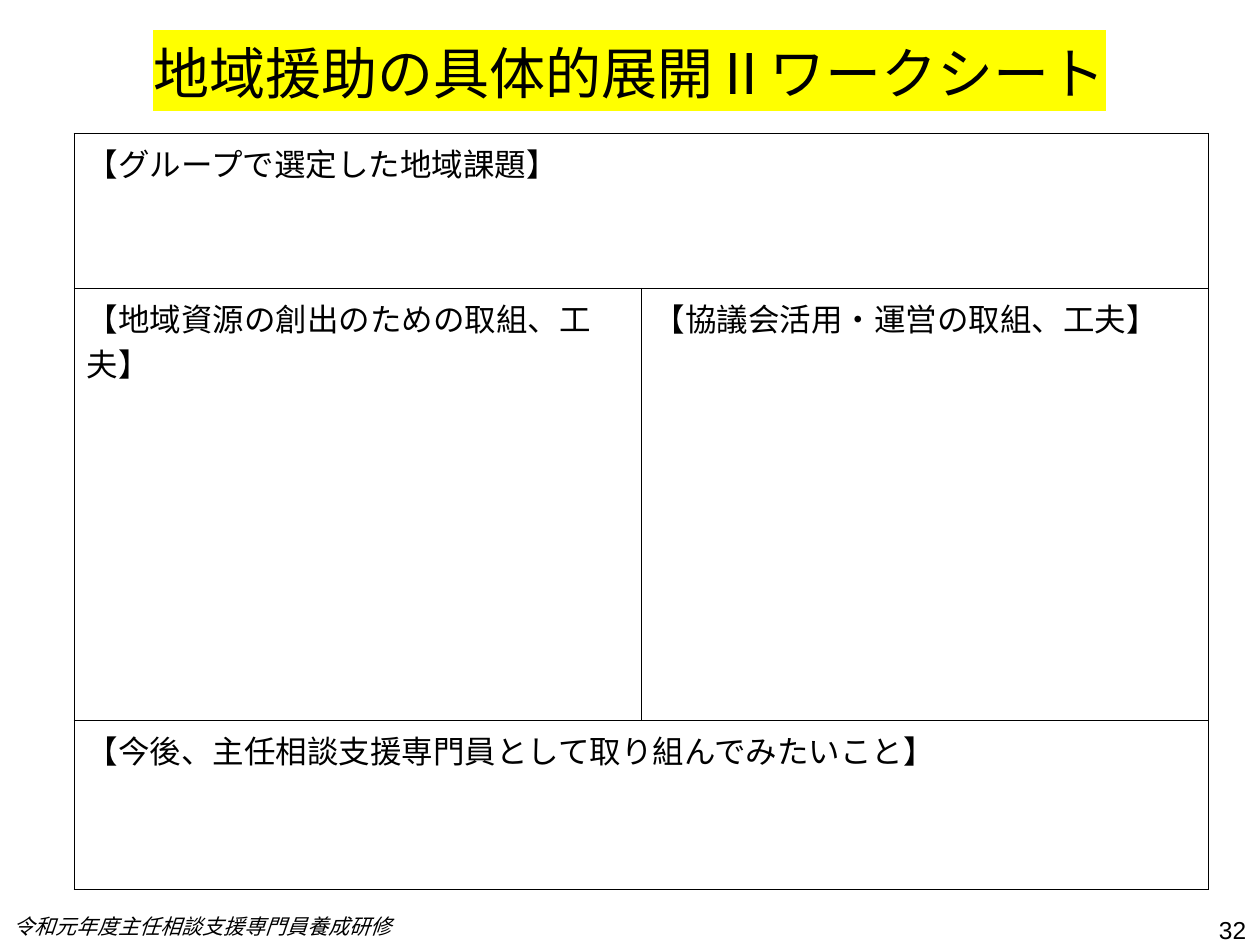
"""Build a one-page community support worksheet slide."""
import dataclasses

import lxml.etree
import pptx
import pptx.dml.color
import pptx.enum.text
import pptx.oxml.ns
import pptx.util

Inches = pptx.util.Inches
Align = pptx.enum.text.PP_ALIGN
Anchor = pptx.enum.text.MSO_ANCHOR


@dataclasses.dataclass(frozen=True)
class Theme:
    ink: str = "000000"
    mark: str = "FFFF00"
    face: str = "Arial"
    asian: str = "Noto Sans CJK JP"
    title: int = 32
    body: int = 18
    page: int = 14
    foot: int = 12
    rule: float = 1


@dataclasses.dataclass(frozen=True)
class Note:
    text: str
    box: tuple[float, float, float, float]
    size: int
    face: str
    align: Align
    slant: bool = False


@dataclasses.dataclass(frozen=True)
class Band:
    high: float
    heads: tuple[str, ...]


THEME = Theme()
COLS = 2
WIDE = 4.5
BANDS = (
    Band(1.23, ("【グループで選定した地域課題】",)),
    Band(3.43, ("【地域資源の創出のための取組、工夫】", "【協議会活用・運営の取組、工夫】")),
    Band(1.34, ("【今後、主任相談支援専門員として取り組んでみたいこと】",)),
)
NOTES = (
    Note("令和元年度主任相談支援専門員養成研修", (0.01, 7.2, 3.63, 0.29),
         THEME.foot, THEME.asian, Align.LEFT, True),
    Note("32", (7.66, 7.21, 2.33, 0.29), THEME.page, THEME.face, Align.RIGHT),
)


def style(para, size: int, face: str = THEME.face, slant: bool = False) -> None:
    """Set the font of a paragraph."""
    font = para.font
    font.size, font.name = pptx.util.Pt(size), face
    font.bold, font.italic = False, slant
    font.color.rgb = pptx.dml.color.RGBColor.from_string(THEME.ink)


def paint(node, tag: str, tone: str):
    """Add an element that holds one colour."""
    qn = pptx.oxml.ns.qn
    part = lxml.etree.SubElement(node, qn(tag))
    lxml.etree.SubElement(part, qn("a:srgbClr"), val=tone)
    return part


def edge(cell) -> None:
    """Clear the fill of a cell and rule its four sides."""
    cell.fill.background()
    props = cell._tc.get_or_add_tcPr()
    for spot, side in enumerate("LRTB"):
        line = props.makeelement(pptx.oxml.ns.qn(f"a:ln{side}"),
                                 {"w": str(pptx.util.Pt(THEME.rule))})
        paint(line, "a:solidFill", THEME.ink)
        props.insert(spot, line)


def add_title(slide, text: str) -> None:
    """Fill the title placeholder with highlighted text."""
    title = slide.shapes.title
    title.left, title.top = Inches(0.5), Inches(0.15)
    title.width, title.height = Inches(9), Inches(0.85)
    title.text_frame.vertical_anchor = Anchor.MIDDLE
    para = title.text_frame.paragraphs[0]
    para.alignment = Align.CENTER
    style(para, THEME.title)
    run = para.add_run()
    run.text = text
    paint(run._r.get_or_add_rPr(), "a:highlight", THEME.mark)


def add_grid(slide, bands: tuple[Band, ...]) -> None:
    """Draw the worksheet table, merging rows with a single heading."""
    high = sum(band.high for band in bands)
    grid = slide.shapes.add_table(len(bands), COLS, Inches(0.59), Inches(1.06),
                                  Inches(WIDE * COLS), Inches(high)).table
    grid.first_row = grid.horz_banding = False
    for row, band in enumerate(bands):
        grid.rows[row].height = Inches(band.high)
        for col in range(COLS):
            edge(grid.cell(row, col))
        if len(band.heads) == 1:
            grid.cell(row, 0).merge(grid.cell(row, COLS - 1))
        for col, head in enumerate(band.heads):
            cell = grid.cell(row, col)
            cell.text = head
            style(cell.text_frame.paragraphs[0], THEME.body)


def add_note(slide, note: Note) -> None:
    """Place a small text box."""
    frame = slide.shapes.add_textbox(*map(Inches, note.box)).text_frame
    frame.word_wrap = True
    frame.text = note.text
    para = frame.paragraphs[0]
    para.alignment = note.align
    style(para, note.size, note.face, note.slant)


def main() -> None:
    """Build and save the slide."""
    deck = pptx.Presentation()
    deck.slide_width, deck.slide_height = Inches(10), Inches(7.5)
    slide = deck.slides.add_slide(deck.slide_layouts[5])
    add_title(slide, "地域援助の具体的展開Ⅱワークシート")
    add_grid(slide, BANDS)
    for note in NOTES:
        add_note(slide, note)
    deck.save("out.pptx")


if __name__ == "__main__":
    main()
